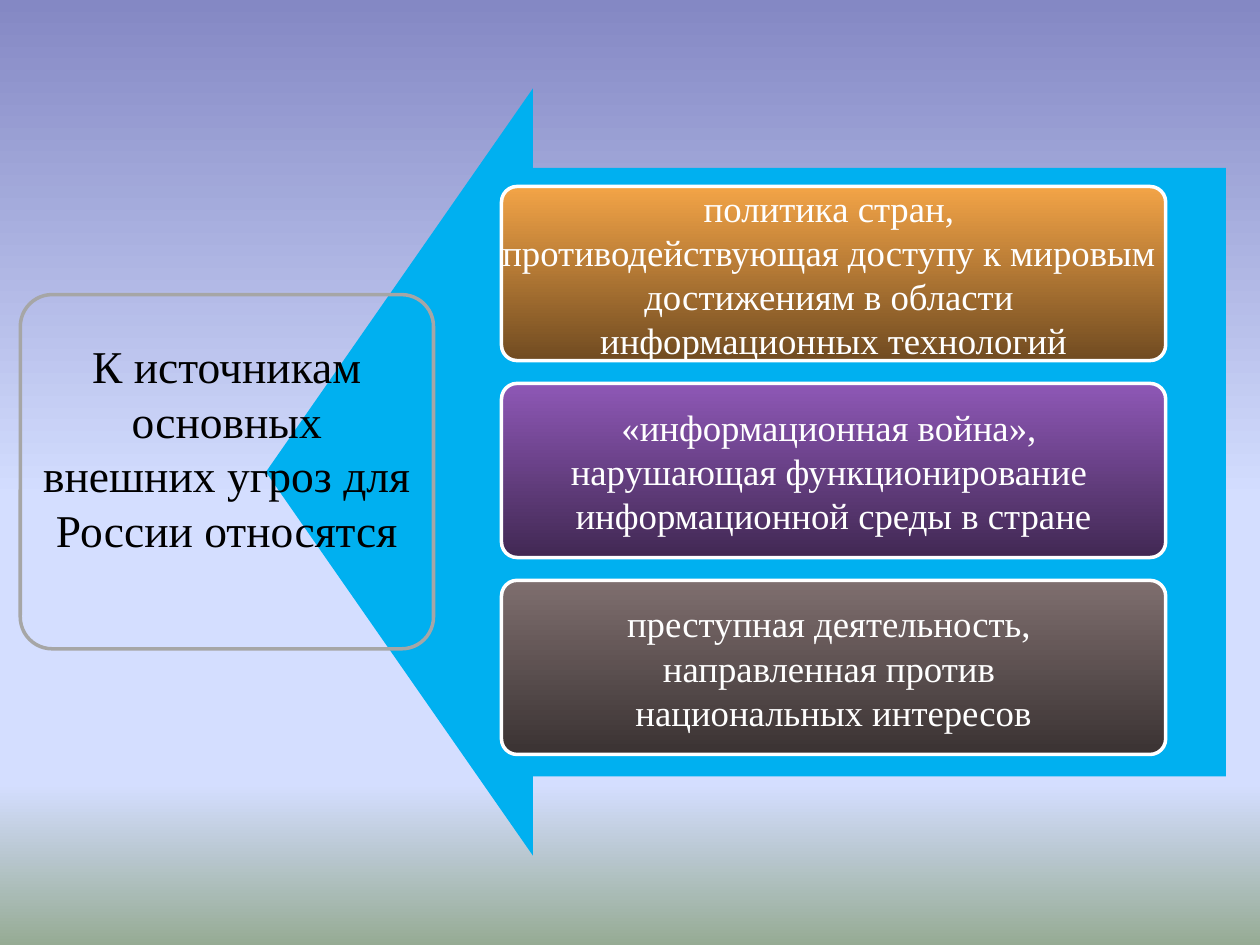
"""Build a slide on the main external threats to information security."""
from copy import deepcopy

from pptx import Presentation
from pptx.dml.color import RGBColor
from pptx.enum.shapes import MSO_SHAPE
from pptx.enum.text import MSO_ANCHOR, PP_ALIGN
from pptx.util import Cm, Pt

ARROW = MSO_SHAPE.RIGHT_ARROW
ROUNDED = MSO_SHAPE.ROUNDED_RECTANGLE
MIDDLE = MSO_ANCHOR.MIDDLE
CENTER = PP_ALIGN.CENTER

THEME = {
    "font": "Times New Roman",
    "heading_size": 26,
    "threat_size": 21,
    "heading_text": "000000",
    "threat_text": "FFFFFF",
    "heading_line": "A6A6A6",
    "threat_line": "FFFFFF",
    "arrow": "00B0F0",
    "line_width": 2,
    "background": [(0, "8488C4"), (0.53, "D4DEFF"), (0.83, "D4DEFF"), (1, "96AB94")],
    "threat_fills": [("F3A447", "704B21"), ("8E58B6", "412853"), ("7F6F6F", "3A3232")],
}

HEADING = ["К источникам основных внешних угроз для России относятся"]
THREATS = [
    ["политика стран, ", "противодействующая доступу к мировым ",
     "достижениям в области ", "информационных технологий"],
    ["«информационная война», ", "нарушающая функционирование ",
     "информационной среды в стране"],
    ["преступная деятельность, ", "направленная против ", "национальных интересов"],
]

ARROW_AREA = (5.36, 1.78, 19.35, 15.47)
HEADING_AREA = (0.41, 5.94, 8.33, 7.14)
THREAT_LEFT, THREAT_TOP, THREAT_WIDTH, THREAT_HEIGHT = 10.11, 3.76, 13.39, 3.51
THREAT_GAP = 0.46
CORNER = 0.09


def color(value):
    return RGBColor.from_string(value)


def fill_gradient(fill, stops):
    fill.gradient()
    fill.gradient_angle = 270
    first = fill.gradient_stops[0]._gs
    for _ in stops[2:]:
        first.addnext(deepcopy(first))
    for stop, (position, value) in zip(fill.gradient_stops, stops):
        stop.position = position
        stop.color.rgb = color(value)


def add_box(page, kind, area):
    box = page.shapes.add_shape(kind, *map(Cm, area))
    box.shadow.inherit = False
    return box


def add_text_box(page, area, lines, role, wrap):
    box = add_box(page, ROUNDED, area)
    box.adjustments[0] = CORNER
    box.line.color.rgb = color(THEME[role + "_line"])
    box.line.width = Pt(THEME["line_width"])
    frame = box.text_frame
    frame.word_wrap = wrap
    frame.vertical_anchor = MIDDLE
    frame.text = "\n".join(lines)
    for para in frame.paragraphs:
        para.alignment = CENTER
        for span in para.runs:
            span.font.name = THEME["font"]
            span.font.size = Pt(THEME[role + "_size"])
            span.font.color.rgb = color(THEME[role + "_text"])
    return box


def main():
    deck = Presentation()
    deck.slide_width, deck.slide_height = Cm(25.4), Cm(19.05)
    page = deck.slides.add_slide(deck.slide_layouts[6])
    fill_gradient(page.background.fill, THEME["background"])

    arrow = add_box(page, ARROW, ARROW_AREA)
    arrow.rotation = 180
    arrow.adjustments[0], arrow.adjustments[1] = 0.793, 0.348
    arrow.fill.solid()
    arrow.fill.fore_color.rgb = color(THEME["arrow"])
    arrow.line.fill.background()

    for index, (lines, shades) in enumerate(zip(THREATS, THEME["threat_fills"])):
        top = THREAT_TOP + index * (THREAT_HEIGHT + THREAT_GAP)
        area = (THREAT_LEFT, top, THREAT_WIDTH, THREAT_HEIGHT)
        box = add_text_box(page, area, lines, "threat", False)
        fill_gradient(box.fill, list(enumerate(shades)))

    heading = add_text_box(page, HEADING_AREA, HEADING, "heading", True)
    heading.fill.background()
    heading.text_frame.margin_bottom = Cm(1.1)

    deck.save("out.pptx")


if __name__ == "__main__":
    main()
